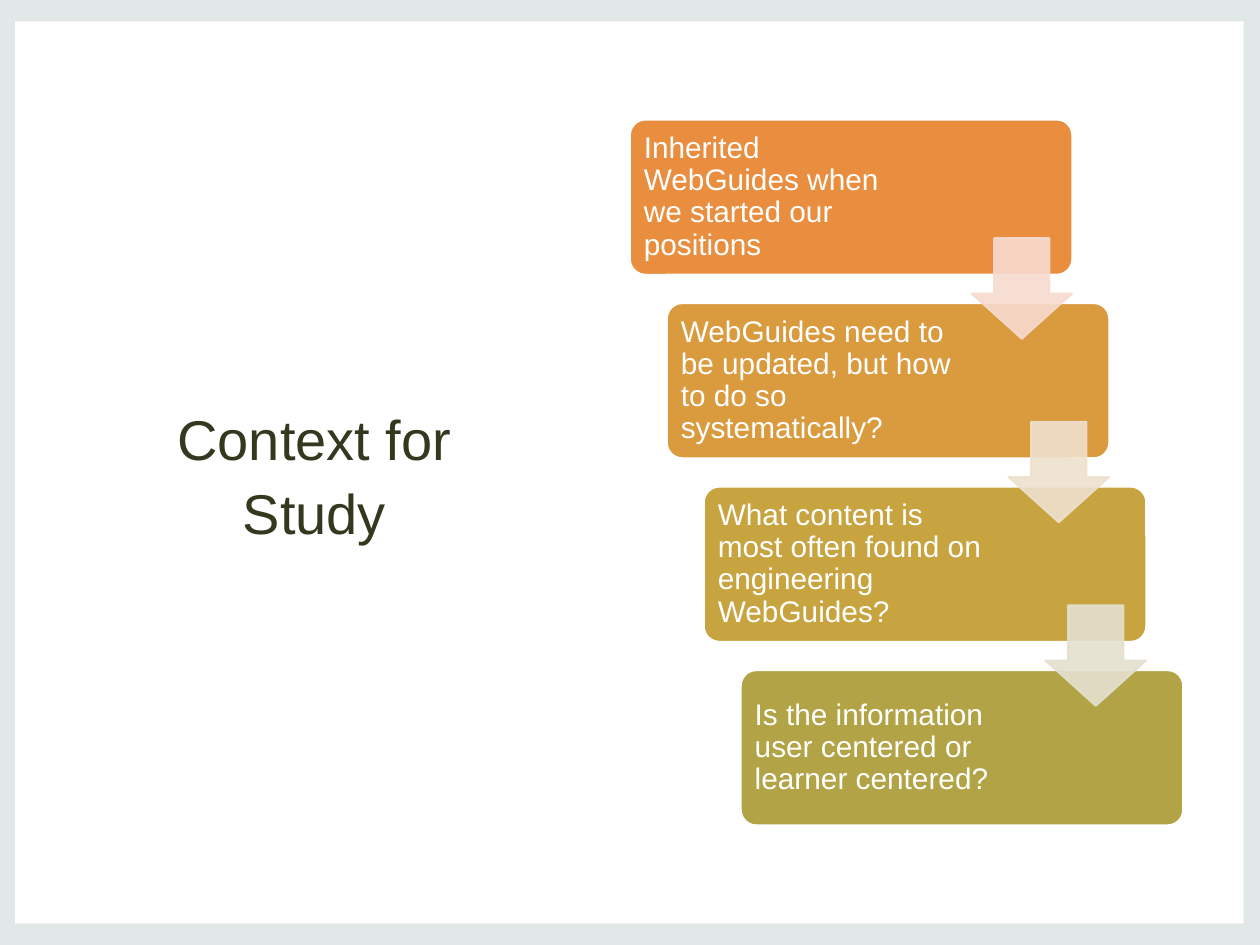
from pptx import Presentation
from pptx.dml.color import RGBColor
from pptx.enum.shapes import MSO_SHAPE
from pptx.enum.text import MSO_ANCHOR, PP_ALIGN
from pptx.oxml.ns import qn
from pptx.util import Inches, Pt
from lxml.etree import SubElement

FONT = "Arial"
WHITE = RGBColor(0xFF, 0xFF, 0xFF)
FRAME = RGBColor(0xE2, 0xE8, 0xE8)
TITLE = RGBColor(0x36, 0x37, 0x1F)

# Each step: text, text width, card colour
STEPS = [
    ("Inherited WebGuides when we started our positions", 2.07,
     RGBColor(0xE9, 0x8D, 0x3F)),
    ("WebGuides need to be updated, but how to do so systematically?", 2.34,
     RGBColor(0xDA, 0x9B, 0x3E)),
    ("What content is most often found on engineering WebGuides?", 2.34,
     RGBColor(0xC8, 0xA4, 0x40)),
    ("Is the information user centered or learner centered?", 2.34,
     RGBColor(0xB2, 0xA4, 0x46)),
]
ARROW_COLOURS = [
    RGBColor(0xF7, 0xDB, 0xCF),
    RGBColor(0xEE, 0xE0, 0xCE),
    RGBColor(0xE4, 0xE0, 0xCF),
]

# Staircase geometry in inches
FIRST_LEFT, FIRST_TOP = 5, 0.95
STEP_RIGHT, STEP_DOWN = 0.88 / 3, 4.37 / 3
CARD_WIDTH, CARD_HEIGHT = 3.51, 1.23
TEXT_OFFSET = 0.04
ARROW_SIZE = 0.8
ARROW_RIGHT, ARROW_DOWN = 2.71, 0.94


def add_block(page, kind, left, top, width, height, fill, line=None, adjust=()):
    block = page.shapes.add_shape(
        kind, Inches(left), Inches(top), Inches(width), Inches(height))
    block.shadow.inherit = False
    block.fill.solid()
    block.fill.fore_color.rgb = fill
    if line is None:
        block.line.fill.background()
    else:
        block.line.color.rgb = line
        block.line.width = Pt(1)
    for index, value in enumerate(adjust):
        block.adjustments[index] = value
    return block


def set_opacity(block, percent):
    for colour in block.element.spPr.iter(qn("a:srgbClr")):
        SubElement(colour, qn("a:alpha")).set("val", str(percent * 1000))


def add_text(page, text, left, top, width, height, size, colour, spacing,
             align=PP_ALIGN.LEFT, inset=None):
    box = page.shapes.add_textbox(
        Inches(left), Inches(top), Inches(width), Inches(height))
    frame = box.text_frame
    frame.word_wrap = True
    frame.vertical_anchor = MSO_ANCHOR.MIDDLE
    if inset is not None:
        frame.margin_left = frame.margin_right = Inches(inset)
        frame.margin_top = frame.margin_bottom = Inches(inset)
    para = frame.paragraphs[0]
    para.alignment = align
    para.line_spacing = spacing
    span = para.add_run()
    span.text = text
    span.font.name = FONT
    span.font.size = Pt(size)
    span.font.color.rgb = colour


def add_card(page, index, text, text_width, fill):
    left = FIRST_LEFT + index * STEP_RIGHT
    top = FIRST_TOP + index * STEP_DOWN
    add_block(page, MSO_SHAPE.ROUNDED_RECTANGLE, left, top,
              CARD_WIDTH, CARD_HEIGHT, fill, WHITE, [0.1])
    add_text(page, text, left + TEXT_OFFSET, top + TEXT_OFFSET, text_width,
             CARD_HEIGHT - 2 * TEXT_OFFSET, 17, WHITE, 0.9, inset=0.07)


def add_arrow(page, index, colour):
    left = FIRST_LEFT + index * STEP_RIGHT + ARROW_RIGHT
    top = FIRST_TOP + index * STEP_DOWN + ARROW_DOWN
    arrow = add_block(page, MSO_SHAPE.DOWN_ARROW, left, top,
                      ARROW_SIZE, ARROW_SIZE, colour, colour)
    # The arrow's first handle is its shaft width, the second its head length
    arrow.adjustments[0] = 0.55
    arrow.adjustments[1] = 0.45
    set_opacity(arrow, 90)


def main():
    deck = Presentation()
    deck.slide_width = Inches(10)
    deck.slide_height = Inches(7.5)
    page = deck.slides.add_slide(deck.slide_layouts[6])

    # Framed background
    add_block(page, MSO_SHAPE.RECTANGLE, 0, 0, 10, 7.5, FRAME)
    add_block(page, MSO_SHAPE.RECTANGLE, 0.12, 0.17, 9.75, 7.16, WHITE)

    # Title
    add_text(page, "Context for Study", 0.84, 1.12, 3.31, 5.25, 32, TITLE, 1.1,
             PP_ALIGN.CENTER)

    # Staircase of cards, with arrows on top
    for index, (text, text_width, fill) in enumerate(STEPS):
        add_card(page, index, text, text_width, fill)
    for index, colour in enumerate(ARROW_COLOURS):
        add_arrow(page, index, colour)

    deck.save("out.pptx")


if __name__ == "__main__":
    main()
